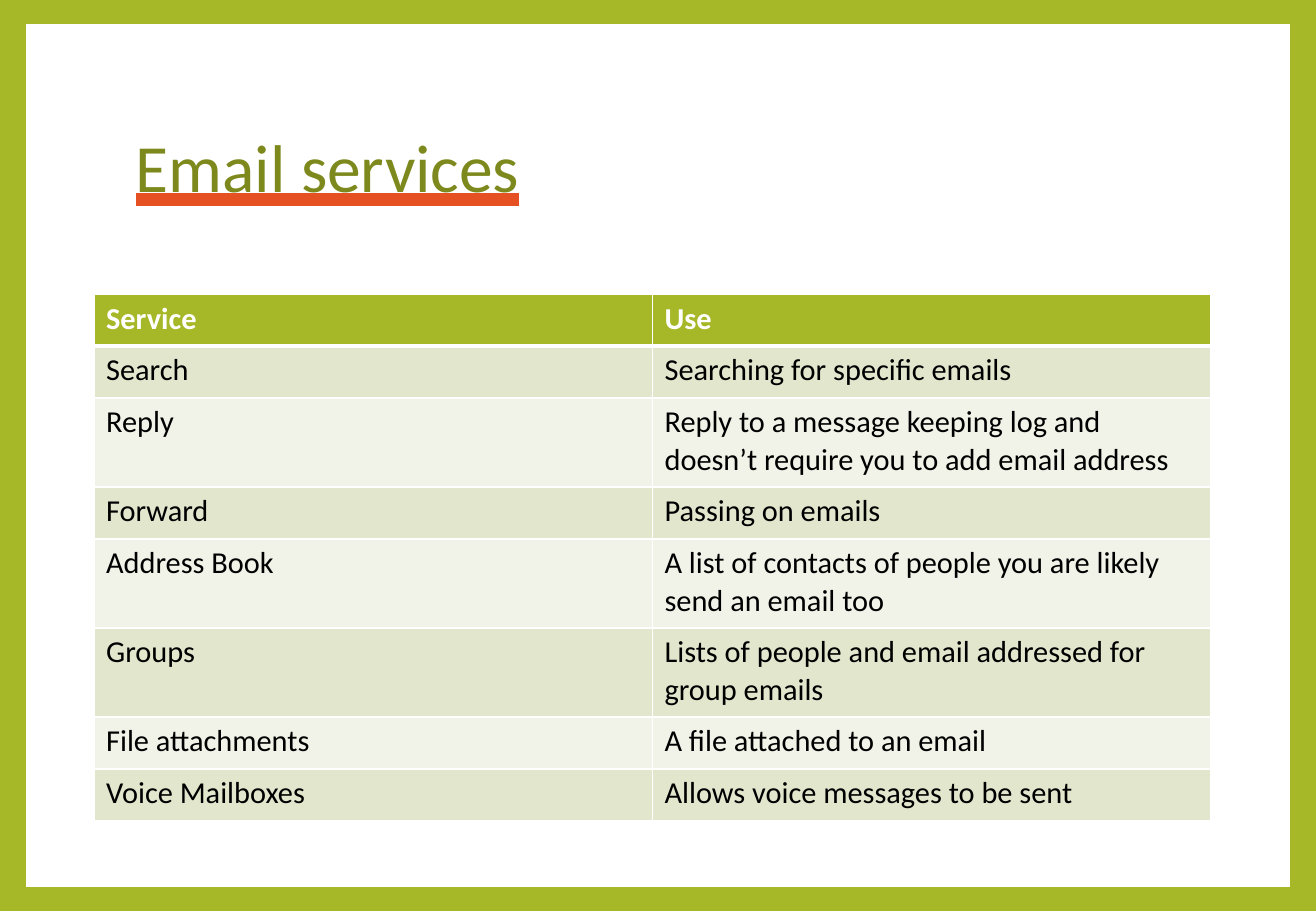
from dataclasses import dataclass

from lxml import etree
from pptx import Presentation
from pptx import util as u
from pptx.dml.color import RGBColor
from pptx.enum import shapes, text
from pptx.oxml import ns

SCALE = 7526  # EMU per px


@dataclass(frozen=True)
class Theme:
    font: str = "Calibri"
    title_size: int = 40
    table_size: int = 18
    green: str = "A6B727"
    title: str = "7D891D"
    underline: str = "E65124"
    white: str = "FFFFFF"
    black: str = "000000"
    bands: tuple = ("E1E6CD", "F1F3E8")


def px(*lengths):
    return [u.Emu(length * SCALE) for length in lengths]


def apply(target, values):
    for name, value in values.items():
        setattr(target, name, value)


def solid(parent, tag, color, **attributes):
    """Build a DrawingML element that holds a solid colour."""
    element = etree.SubElement(parent, ns.qn(tag), attributes)
    fill = etree.SubElement(element, ns.qn("a:solidFill"))
    etree.SubElement(fill, ns.qn("a:srgbClr"), val=color)
    return element


class Slide:
    def __init__(self, deck, theme):
        self.theme = theme
        self.page = deck.slides.add_slide(deck.slide_layouts[6])

    def background(self, color):
        fill = self.page.background.fill
        fill.solid()
        fill.fore_color.rgb = RGBColor.from_string(color)

    def panel(self, area, color):
        shape = self.page.shapes.add_shape(shapes.MSO_SHAPE.RECTANGLE, *px(*area))
        shape.shadow.inherit = False
        shape.fill.solid()
        shape.fill.fore_color.rgb = RGBColor.from_string(color)
        shape.line.fill.background()

    def add_words(self, frame, words, size, color, **values):
        para = frame.paragraphs[0]
        span = para.add_run()
        span.text = words
        apply(span.font, dict(name=self.theme.font, size=u.Pt(size), **values))
        span.font.color.rgb = RGBColor.from_string(color)
        return para, span

    def title(self, area, words):
        frame = self.page.shapes.add_textbox(*px(*area)).text_frame
        apply(frame, dict(word_wrap=True, vertical_anchor=text.MSO_ANCHOR.MIDDLE))
        para, span = self.add_words(frame, words, self.theme.title_size, self.theme.title,
                                    underline=text.MSO_UNDERLINE.HEAVY_LINE)
        para.line_spacing = 0.9
        properties = span._r.get_or_add_rPr()
        line_color = solid(properties, "a:uFill", self.theme.underline)
        properties.find(ns.qn("a:solidFill")).addnext(line_color)

    def borders(self, cell, top, bottom):
        properties = cell._tc.get_or_add_tcPr()
        widths = {"a:lnL": 1, "a:lnR": 1, "a:lnT": top, "a:lnB": bottom}
        for place, (tag, width) in enumerate(widths.items()):
            line = solid(properties, tag, self.theme.white, w=str(u.Pt(width)))
            properties.insert(place, line)

    def table(self, area, heights, rows):
        theme = self.theme
        table = self.page.shapes.add_table(len(rows), len(rows[0]), *px(*area)).table
        apply(table, dict(first_row=False, horz_banding=False))
        for row, height in zip(table.rows, px(*heights)):
            row.height = height
        for r, row in enumerate(rows):
            header = r == 0
            color = theme.green if header else theme.bands[(r - 1) % 2]
            for c, words in enumerate(row):
                cell = table.cell(r, c)
                cell.fill.solid()
                cell.fill.fore_color.rgb = RGBColor.from_string(color)
                self.borders(cell, top=3 if r == 1 else 1, bottom=3 if header else 1)
                self.add_words(cell.text_frame, words, theme.table_size,
                               theme.white if header else theme.black, bold=header)


SERVICES = [
    ("Service", "Use"),
    ("Search", "Searching for specific emails"),
    ("Reply", "Reply to a message keeping log and doesn’t require you to add email address"),
    ("Forward", "Passing on emails"),
    ("Address Book", "A list of contacts of people you are likely send an email too"),
    ("Groups", "Lists of people and email addressed for group emails"),
    ("File attachments", "A file attached to an email"),
    ("Voice Mailboxes", "Allows voice messages to be sent"),
]
ONE_LINE, TWO_LINES = 52, 89


def main():
    deck = Presentation()
    deck.slide_width, deck.slide_height = px(1316, 911)
    theme = Theme()
    slide = Slide(deck, theme)
    slide.background(theme.green)
    slide.panel((26, 24, 1264, 863), theme.white)
    slide.title((124, 81, 1067, 180), "Email services")
    heights = [TWO_LINES if len(use) > 40 else ONE_LINE for _, use in SERVICES]
    slide.table((94, 294, 1117, sum(heights)), heights, SERVICES)
    deck.save("out.pptx")


if __name__ == "__main__":
    main()
